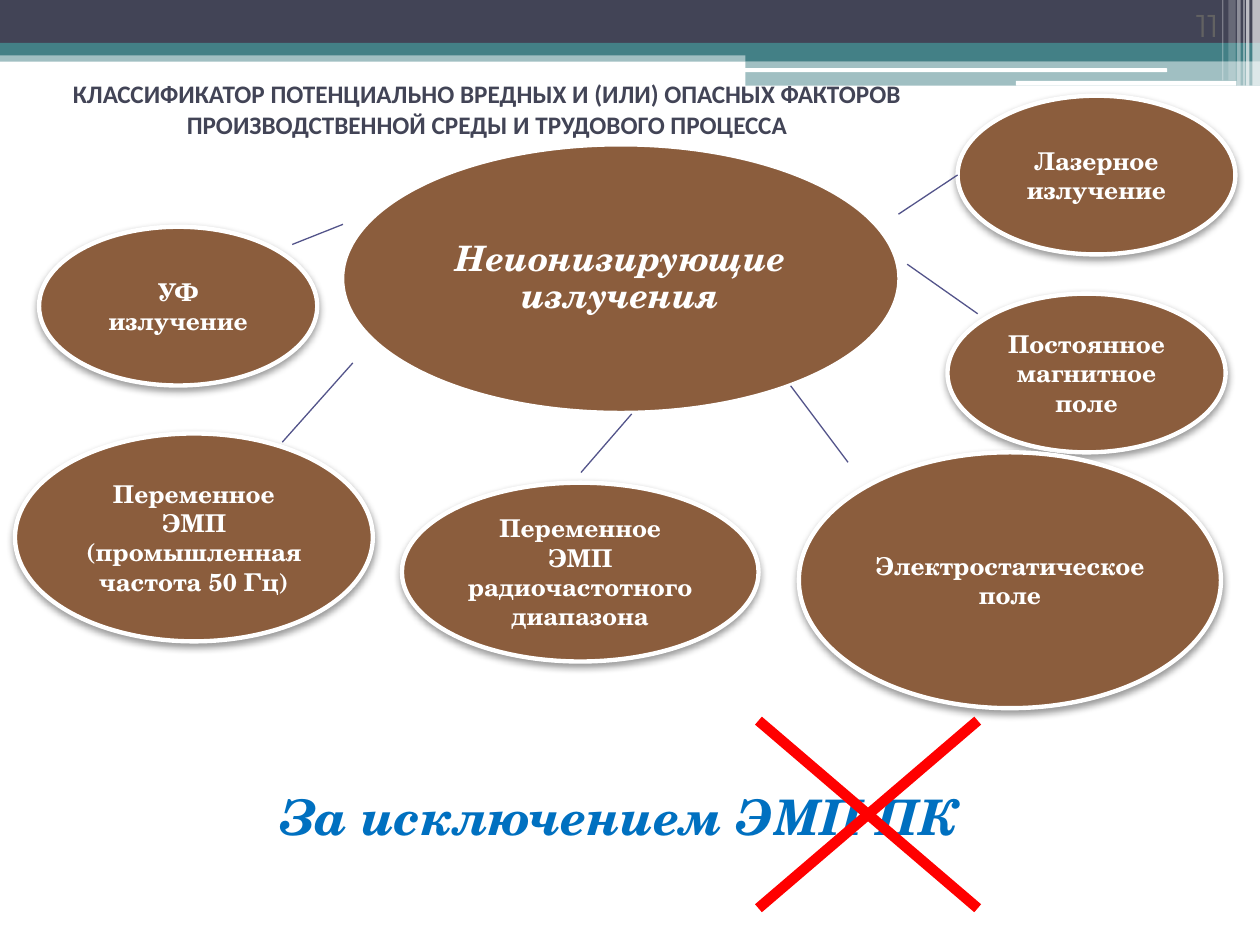
from lxml.etree import SubElement
from pptx import Presentation
from pptx.dml.color import RGBColor
from pptx.enum.shapes import MSO_CONNECTOR, MSO_SHAPE
from pptx.enum.text import MSO_ANCHOR, PP_ALIGN
from pptx.oxml.ns import qn
from pptx.util import Pt

WHITE = RGBColor(0xFF, 0xFF, 0xFF)
NAVY = RGBColor(0x42, 0x44, 0x56)
TEAL = RGBColor(0x43, 0x80, 0x86)
BROWN = RGBColor(0x8B, 0x5D, 0x3D)
VIOLET = RGBColor(0x53, 0x54, 0x8A)
BLUE = RGBColor(0x00, 0x70, 0xC0)
RED = RGBColor(0xFF, 0x00, 0x00)
GRAY = RGBColor(0x62, 0x62, 0x62)
SERIF = "TeX Gyre Schola"

BANDS = [
    ((0, 28.8, 720, 6.5), TEAL, 50),
    ((0, 0, 720, 24.5), NAVY, 100),
    ((0, 24.5, 720, 7.2), TEAL, 100),
    ((426, 28, 294, 7), TEAL, 100),
    ((426, 35, 294, 14), TEAL, 50),
]
ROUNDED_BANDS = [(425.5, 39, 241.5, 2.2), (580.5, 46.2, 126, 2.7)]
STRIPES = [
    (715.7, 4.3, 49, 65),
    (712, 2, 49, 65),
    (710.5, 0.7, 49, 60),
    (707, 2, 49, 40),
    (702, 4.2, 46, 20),
    (698.4, 0.7, 46, 30),
]

NUMBER = "11"
TITLE = ("КЛАССИФИКАТОР ПОТЕНЦИАЛЬНО ВРЕДНЫХ И (ИЛИ) ОПАСНЫХ ФАКТОРОВ "
         "ПРОИЗВОДСТВЕННОЙ СРЕДЫ И ТРУДОВОГО ПРОЦЕССА")
EXCEPTION = "За исключением ЭМП ПК"
MAIN_TOPIC = ("Неионизирующие излучения", (196, 83, 317.5, 152.5))
FACTORS = [
    ("Переменное ЭМП\n(промышленная частота 50 Гц)", (8.6, 247.7, 204.5, 118.8)),
    ("Переменное ЭМП радиочастотного диапазона", (229.7, 275.8, 203.8, 102.2)),
    ("Постоянное магнитное поле", (541.4, 167.8, 159, 90.7)),
    ("Электростатическое поле", (456.5, 258.5, 241.2, 146.2)),
    ("УФ излучение", (22.3, 129.6, 159, 90.7)),
    ("Лазерное излучение", (547.2, 54.7, 158.8, 90.7)),
]
SPOKES = [
    (201.6, 207.4, 161.3, 252.7),
    (361, 236.5, 332, 270),
    (450.7, 219, 484.6, 264.2),
    (518.4, 151, 558.7, 179.3),
    (196, 128.2, 167, 139.7),
    (547.2, 100, 513.4, 122.4),
]
CROSS = [(433.4, 411.8, 558.7, 519), (558.7, 411.8, 433.4, 519)]


def add_band(slide, box, color, opacity, kind=MSO_SHAPE.RECTANGLE):
    shape = slide.shapes.add_shape(kind, *map(Pt, box))
    shape.shadow.inherit = False
    shape.fill.solid()
    shape.fill.fore_color.rgb = color
    shape.line.fill.background()
    if opacity < 100:
        color_element = shape.fill._xPr.find(qn("a:solidFill"))[0]
        SubElement(color_element, qn("a:alpha"), val=str(opacity * 1000))


def write(shape, text, size, color, font=SERIF, bold=True, italic=False,
          align=PP_ALIGN.CENTER, anchor=MSO_ANCHOR.MIDDLE):
    frame = shape.text_frame
    frame.word_wrap = True
    frame.vertical_anchor = anchor
    frame.text = text
    for paragraph in frame.paragraphs:
        paragraph.alignment = align
        paragraph.font.size = Pt(size)
        paragraph.font.name = font
        paragraph.font.bold = bold
        paragraph.font.italic = italic
        paragraph.font.color.rgb = color


def add_text(slide, box, *args, **options):
    write(slide.shapes.add_textbox(*map(Pt, box)), *args, **options)


def add_ellipse(slide, box, line_width):
    shape = slide.shapes.add_shape(MSO_SHAPE.OVAL, *map(Pt, box))
    shape.shadow.inherit = False
    shape.fill.solid()
    shape.fill.fore_color.rgb = BROWN
    shape.line.color.rgb = WHITE
    shape.line.width = Pt(line_width)
    return shape


def add_shadow(shape):
    effects = shape._element.spPr.find(qn("a:effectLst"))
    shadow = SubElement(effects, qn("a:outerShdw"), blurRad=str(Pt(4.1)),
                        dist=str(Pt(2)), dir="5400000", rotWithShape="0")
    color = SubElement(shadow, qn("a:srgbClr"), val="000000")
    SubElement(color, qn("a:alpha"), val="40000")


def add_line(slide, ends, color, width):
    line = slide.shapes.add_connector(MSO_CONNECTOR.STRAIGHT, *map(Pt, ends))
    line.line.color.rgb = color
    line.line.width = Pt(width)
    SubElement(line._element.spPr, qn("a:effectLst"))


def main():
    presentation = Presentation()
    presentation.slide_width = Pt(720)
    presentation.slide_height = Pt(540)
    slide = presentation.slides.add_slide(presentation.slide_layouts[6])

    for box, color, opacity in BANDS:
        add_band(slide, box, color, opacity)
    for box in ROUNDED_BANDS:
        add_band(slide, box, WHITE, 100, MSO_SHAPE.ROUNDED_RECTANGLE)
    for left, width, height, opacity in STRIPES:
        add_band(slide, (left, 0, width, height), WHITE, opacity)

    add_text(slide, (643.7, 0, 59.8, 28.8), NUMBER, 18, GRAY, "Montserrat",
             bold=False, align=PP_ALIGN.RIGHT, anchor=MSO_ANCHOR.BOTTOM)
    add_text(slide, (0, 39.6, 556.6, 45.4), TITLE, 14.4, NAVY, "Calibri")

    for text, box in FACTORS:
        ellipse = add_ellipse(slide, box, 2.5)
        add_shadow(ellipse)
        write(ellipse, text, 14, WHITE)
    for ends in SPOKES:
        add_line(slide, ends, VIOLET, 0.75)

    add_text(slide, (28, 445.7, 652.3, 41), EXCEPTION, 28, BLUE, italic=True,
             anchor=MSO_ANCHOR.TOP)

    text, box = MAIN_TOPIC
    topic = add_ellipse(slide, box, 1.5)
    write(topic, text, 20, WHITE, italic=True)
    topic.text_frame.paragraphs[0].line_spacing = 0.9
    for ends in CROSS:
        add_line(slide, ends, RED, 6)

    presentation.save("out.pptx")


if __name__ == "__main__":
    main()
